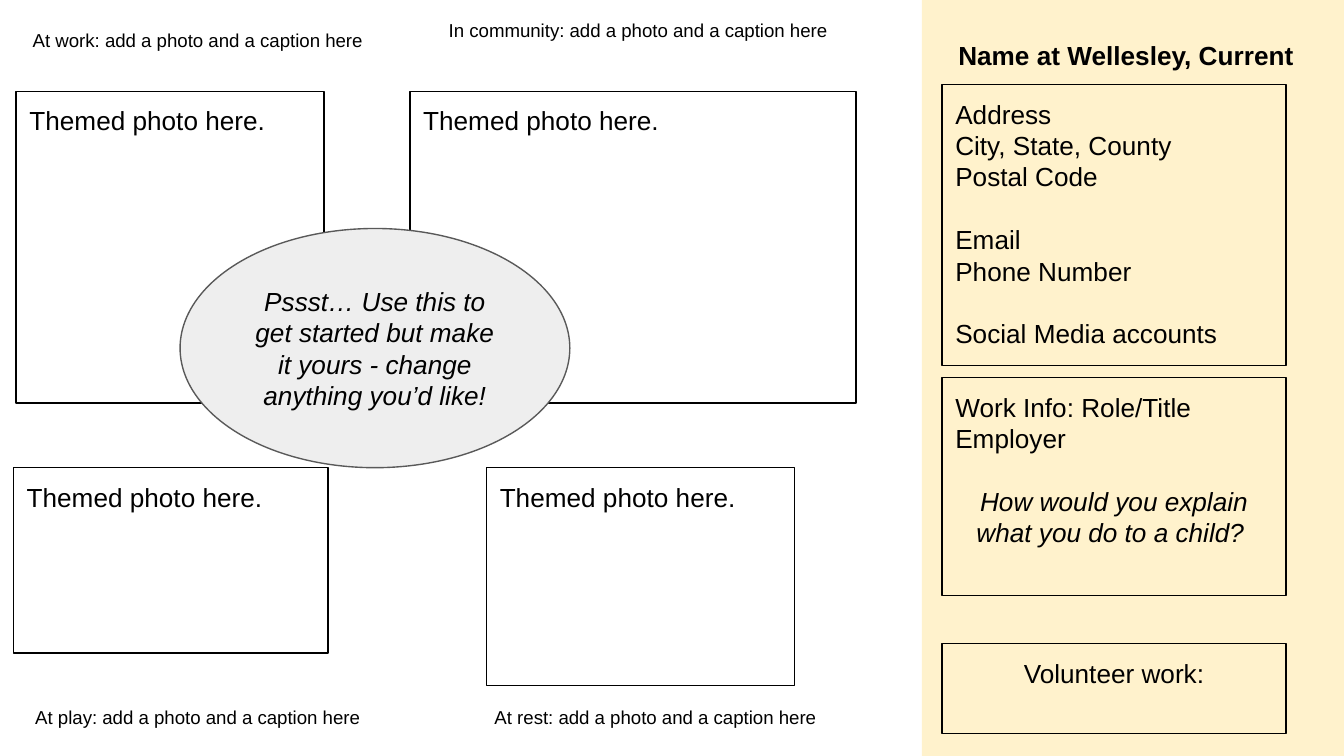
from pptx import Presentation
from pptx.dml.color import RGBColor
from pptx.enum.shapes import MSO_SHAPE
from pptx.enum.text import MSO_ANCHOR, MSO_AUTO_SIZE, PP_ALIGN
from pptx.util import Inches, Pt

BLACK = RGBColor(0x00, 0x00, 0x00)
CREAM = RGBColor(0xFF, 0xF2, 0xCC)
LIGHT_GRAY = RGBColor(0xEE, 0xEE, 0xEE)
DARK_GRAY = RGBColor(0x59, 0x59, 0x59)
FONT = "Arial"
BODY, CAPTION = 14, 10
LINE_GAP = 16.8
LEFT, CENTER = PP_ALIGN.LEFT, PP_ALIGN.CENTER
GROW, FIXED = MSO_AUTO_SIZE.SHAPE_TO_FIT_TEXT, MSO_AUTO_SIZE.NONE

TITLE = "Name at Wellesley, Current"
TITLE_AT = (7.03, 0.19, 2.8, 0.44)
PANEL = (6.86, -0.01, 3.14, 5.64)

# Sidebar boxes share left and width: top, height, groups of (align, italic, lines)
SIDEBAR_LEFT, SIDEBAR_WIDTH = 7.01, 2.56
SIDEBAR = [
    (0.63, 2.09, [
        (LEFT, False, ["Address", "City, State, County", "Postal Code"]),
        (LEFT, False, ["Email", "Phone Number"]),
        (LEFT, False, ["Social Media accounts"]),
    ]),
    (2.81, 1.62, [
        (LEFT, False, ["Work Info: Role/Title", "Employer"]),
        (CENTER, True, ["How would you explain what you do to a child? "]),
    ]),
    (4.79, 0.67, [(CENTER, False, ["Volunteer work:"])]),
]

CAPTION_HEIGHT = 0.37
CAPTIONS = [  # theme, left, top, width, align
    ("In community", 3.24, 0.06, 3.78, LEFT),
    ("At work", 0, 0.13, 2.94, CENTER),
    ("At rest", 3.24, 5.17, 3.27, CENTER),
    ("At play", 0, 5.17, 2.94, CENTER),
]

PHOTO_TEXT = "Themed photo here."
PHOTOS = [
    (3.05, 0.68, 3.32, 2.32),
    (0.1, 3.48, 2.34, 1.38),
    (3.62, 3.48, 2.29, 1.62),
    (0.12, 0.68, 2.29, 2.32),
]

HINT = "Pssst… Use this to get started but make it yours - change anything you’d like!"
HINT_AT = (1.34, 1.7, 2.9, 1.78)


def write(sp, groups, size=BODY, bold=False, anchor=MSO_ANCHOR.TOP, fit=GROW):
    """Fill a shape with groups of lines, one line's height between groups."""
    tf = sp.text_frame
    tf.word_wrap = True
    tf.auto_size = fit
    tf.vertical_anchor = anchor
    tf.margin_left = tf.margin_top = tf.margin_right = tf.margin_bottom = Inches(0.1)
    p = None
    for g, (align, italic, lines) in enumerate(groups):
        for i, line in enumerate(lines):
            p = tf.add_paragraph() if p is not None else tf.paragraphs[0]
            p.alignment = align
            p.space_before = Pt(LINE_GAP if g and i == 0 else 0)
            r = p.add_run()
            r.text = line
            font = r.font
            font.name, font.size = FONT, Pt(size)
            font.bold, font.italic = bold, italic
            font.color.rgb = BLACK


def add_box(s, at, kind=MSO_SHAPE.RECTANGLE, fill=None, line=BLACK):
    sp = s.shapes.add_shape(kind, *map(Inches, at))
    sp.shadow.inherit = False
    if fill is None:
        sp.fill.background()
    else:
        sp.fill.solid()
        sp.fill.fore_color.rgb = fill
    if line is None:
        sp.line.fill.background()
    else:
        sp.line.color.rgb = line
        sp.line.width = Pt(0.75)
    return sp


def main():
    prs = Presentation()
    prs.slide_width = Inches(10)
    prs.slide_height = prs.slide_width * 9 // 16
    s = prs.slides.add_slide(prs.slide_layouts[5])

    title = s.shapes.title
    title.left, title.top, title.width, title.height = map(Inches, TITLE_AT)
    write(title, [(LEFT, False, [TITLE])], bold=True)

    panel = add_box(s, PANEL, fill=CREAM, line=None)
    title.element.addprevious(panel.element)  # panel goes behind the title

    for top, height, groups in SIDEBAR:
        write(add_box(s, (SIDEBAR_LEFT, top, SIDEBAR_WIDTH, height)), groups)

    for theme, left, top, width, align in CAPTIONS:
        at = (left, top, width, CAPTION_HEIGHT)
        caption = s.shapes.add_textbox(*map(Inches, at))
        text = f"{theme}: add a photo and a caption here"
        write(caption, [(align, False, [text])], size=CAPTION)

    for at in PHOTOS:
        write(add_box(s, at), [(LEFT, False, [PHOTO_TEXT])])

    hint = add_box(s, HINT_AT, MSO_SHAPE.OVAL, LIGHT_GRAY, DARK_GRAY)
    write(hint, [(CENTER, True, [HINT])], anchor=MSO_ANCHOR.MIDDLE, fit=FIXED)

    prs.save("out.pptx")


if __name__ == "__main__":
    main()
